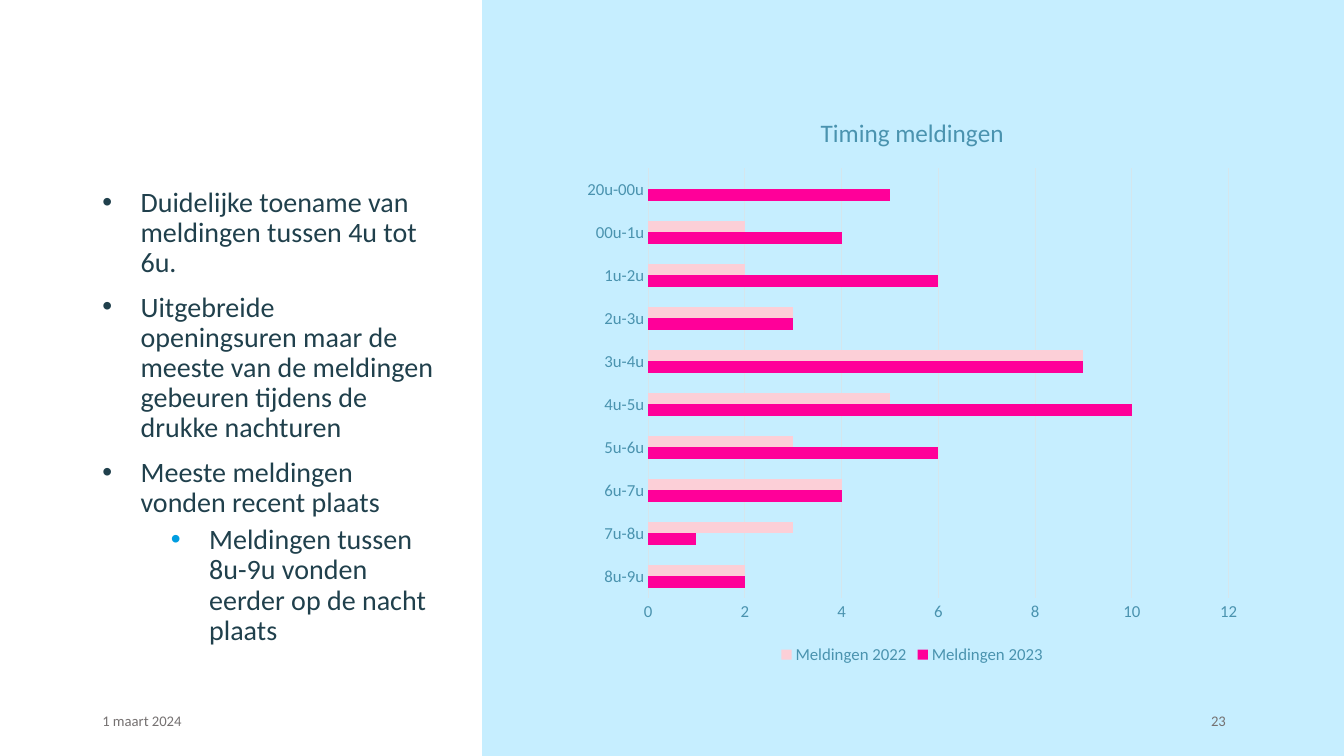
"""Build the slide on the timing of reports: bullet points beside a bar chart."""
from dataclasses import dataclass
from typing import Any

from lxml import etree
from pptx import Presentation
from pptx.chart.data import CategoryChartData
from pptx.dml.color import RGBColor
from pptx.enum.chart import XL_CHART_TYPE, XL_LEGEND_POSITION, XL_TICK_MARK
from pptx.enum.shapes import MSO_SHAPE
from pptx.enum.text import MSO_ANCHOR
from pptx.oxml.ns import qn
from pptx.util import Inches, Pt

BAR_CLUSTERED = XL_CHART_TYPE.BAR_CLUSTERED
LEGEND_BOTTOM = XL_LEGEND_POSITION.BOTTOM
NO_TICK = XL_TICK_MARK.NONE
RECTANGLE = MSO_SHAPE.RECTANGLE
TOP, MIDDLE = MSO_ANCHOR.TOP, MSO_ANCHOR.MIDDLE

SLIDE_WIDTH, SLIDE_HEIGHT = Inches(13.33), Inches(7.5)
COLUMNS, ROWS = 160, 90


@dataclass(frozen=True)
class Theme:
    font: str = "Calibri"
    panel: str = "C6EEFF"
    text: str = "20404C"
    muted: str = "757171"
    accent: str = "009DE0"
    chart_text: str = "4A93AF"
    grid: str = "D5E6ED"
    body_size: float = 20
    footer_size: float = 10.5
    title_size: float = 18
    label_size: float = 12


THEME = Theme()


@dataclass(frozen=True)
class Area:
    column: float
    row: float
    columns: float
    rows: float

    def box(self) -> tuple[int, int, int, int]:
        return (
            int(SLIDE_WIDTH * self.column / COLUMNS),
            int(SLIDE_HEIGHT * self.row / ROWS),
            int(SLIDE_WIDTH * self.columns / COLUMNS),
            int(SLIDE_HEIGHT * self.rows / ROWS),
        )


@dataclass(frozen=True)
class Line:
    text: str
    size: float
    color: str
    margin: float = 0
    space_before: float = 0
    bullet_color: str = ""


@dataclass(frozen=True)
class TextBlock:
    area: Area
    anchor: Any
    lines: tuple[Line, ...]


@dataclass(frozen=True)
class Series:
    name: str
    values: tuple[int, ...]
    color: str


def point(text: str, space_before: float = 10) -> Line:
    return Line(text, THEME.body_size, THEME.text, 0.38, space_before, THEME.text)


def footer(text: str, column: float, columns: float) -> TextBlock:
    line = Line(text, THEME.footer_size, THEME.muted)
    return TextBlock(Area(column, 83.4, columns, 4.8), MIDDLE, (line,))


PANEL = Area(57.4, 0, 102.6, ROWS)
CHART = Area(68.3, 11.2, 80.6, 68.4)
TEXT_BLOCKS = (
    footer("1 maart 2024", 11, 14.2),
    footer("23", 143, 6),
    TextBlock(Area(11, 21.8, 42.2, 57.7), TOP, (
        point("Duidelijke toename van meldingen tussen 4u tot 6u.", 0),
        point("Uitgebreide openingsuren maar de meeste van de meldingen "
              "gebeuren tijdens de drukke nachturen"),
        point("Meeste meldingen vonden recent plaats"),
        Line("Meldingen tussen 8u-9u vonden eerder op de nacht plaats",
             THEME.body_size, THEME.text, 1.06, 5, THEME.accent),
    )),
)
CHART_TITLE = "Timing meldingen"
HOURS = ("8u-9u", "7u-8u", "6u-7u", "5u-6u", "4u-5u",
         "3u-4u", "2u-3u", "1u-2u", "00u-1u", "20u-00u")
SERIES = (
    Series("Meldingen 2023", (2, 1, 4, 6, 10, 9, 3, 6, 4, 5), "FF0099"),
    Series("Meldingen 2022", (2, 3, 4, 3, 5, 9, 3, 2, 2, 0), "FCCFD7"),
)


def apply(target: Any, values: dict[str, Any]) -> None:
    for name, value in values.items():
        setattr(target, name, value)


def style_font(font: Any, size: float, color: str) -> None:
    apply(font, {"name": THEME.font, "size": Pt(size), "bold": False})
    font.color.rgb = RGBColor.from_string(color)


def style_line(line: Any) -> None:
    line.width = Pt(0.75)
    line.color.rgb = RGBColor.from_string(THEME.grid)


def add_bullet(paragraph: Any, line: Line) -> None:
    properties = paragraph._p.get_or_add_pPr()
    properties.set("marL", str(Inches(line.margin)))
    properties.set("indent", str(-Inches(0.38)))
    color = etree.SubElement(properties, qn("a:buClr"))
    etree.SubElement(color, qn("a:srgbClr"), val=line.bullet_color)
    etree.SubElement(properties, qn("a:buFont"), typeface="Arial")
    etree.SubElement(properties, qn("a:buChar"), char="•")


def add_panel(slide: Any) -> None:
    panel = slide.shapes.add_shape(RECTANGLE, *PANEL.box())
    panel.shadow.inherit = False
    panel.fill.solid()
    panel.fill.fore_color.rgb = RGBColor.from_string(THEME.panel)
    panel.line.fill.background()


def add_text(slide: Any, block: TextBlock) -> None:
    frame = slide.shapes.add_textbox(*block.area.box()).text_frame
    apply(frame, {"word_wrap": True, "vertical_anchor": block.anchor})
    for index, line in enumerate(block.lines):
        paragraph = frame.add_paragraph() if index else frame.paragraphs[0]
        if line.bullet_color:
            apply(paragraph, {"line_spacing": 0.9, "space_before": Pt(line.space_before)})
            add_bullet(paragraph, line)
        run = paragraph.add_run()
        run.text = line.text
        style_font(run.font, line.size, line.color)


def add_timing_chart(slide: Any) -> None:
    data = CategoryChartData()
    data.categories = HOURS
    for series in SERIES:
        data.add_series(series.name, series.values)
    chart = slide.shapes.add_chart(BAR_CLUSTERED, *CHART.box(), data).chart
    style_font(chart.font, THEME.label_size, THEME.chart_text)

    title = chart.chart_title.text_frame
    title.text = CHART_TITLE
    style_font(title.paragraphs[0].runs[0].font, THEME.title_size, THEME.chart_text)

    apply(chart, {"has_legend": True})
    apply(chart.legend, {"position": LEGEND_BOTTOM, "include_in_layout": False})
    style_font(chart.legend.font, THEME.label_size, THEME.chart_text)

    for axis in (chart.category_axis, chart.value_axis):
        apply(axis, {"major_tick_mark": NO_TICK, "minor_tick_mark": NO_TICK})
        style_font(axis.tick_labels.font, THEME.label_size, THEME.chart_text)
    style_line(chart.category_axis.format.line)
    chart.value_axis.format.line.fill.background()
    style_line(chart.value_axis.major_gridlines.format.line)
    apply(chart.value_axis, {"minimum_scale": 0, "maximum_scale": 12, "major_unit": 2})

    plot = chart.plots[0]
    apply(plot, {"gap_width": 182, "overlap": 0, "vary_by_categories": False})
    for drawn, series in zip(plot.series, SERIES):
        drawn.format.fill.solid()
        drawn.format.fill.fore_color.rgb = RGBColor.from_string(series.color)


def main() -> None:
    presentation = Presentation()
    apply(presentation, {"slide_width": SLIDE_WIDTH, "slide_height": SLIDE_HEIGHT})
    slide = presentation.slides.add_slide(presentation.slide_layouts[6])
    add_panel(slide)
    for block in TEXT_BLOCKS:
        add_text(slide, block)
    add_timing_chart(slide)
    presentation.save("out.pptx")


if __name__ == "__main__":
    main()
